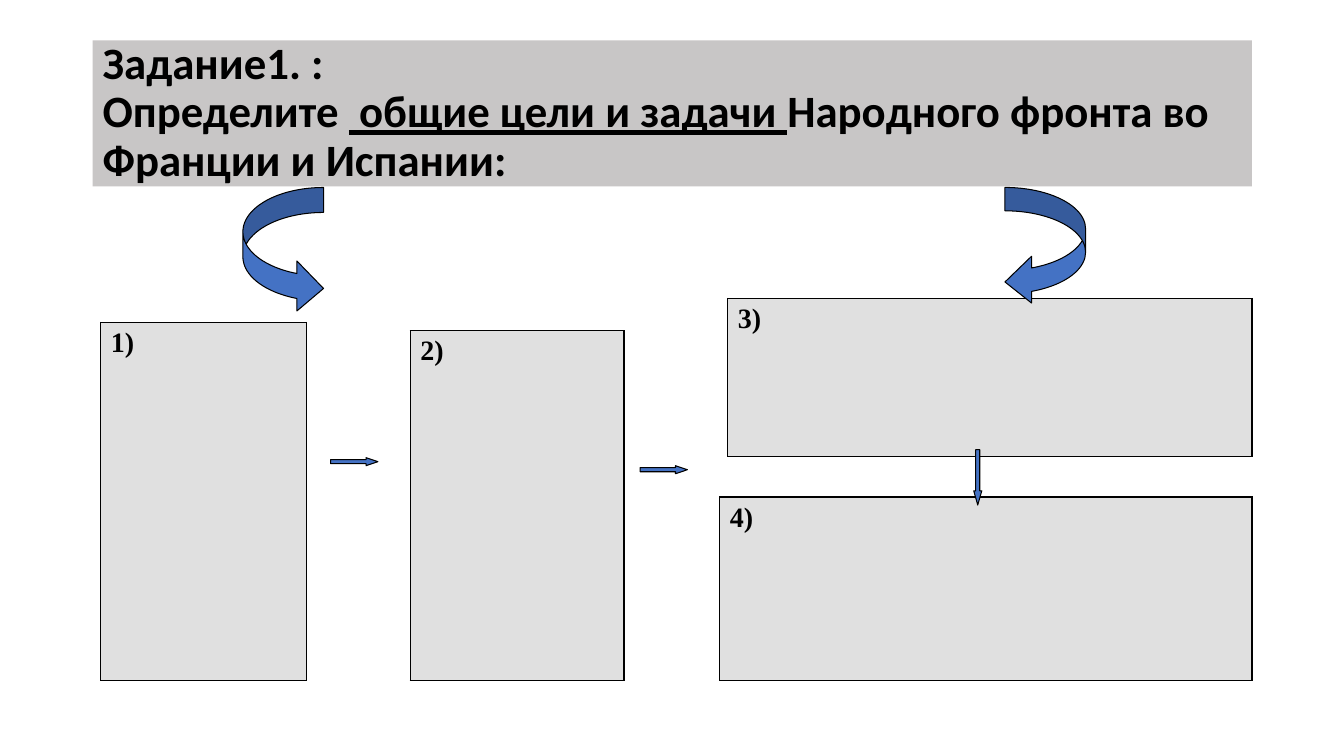
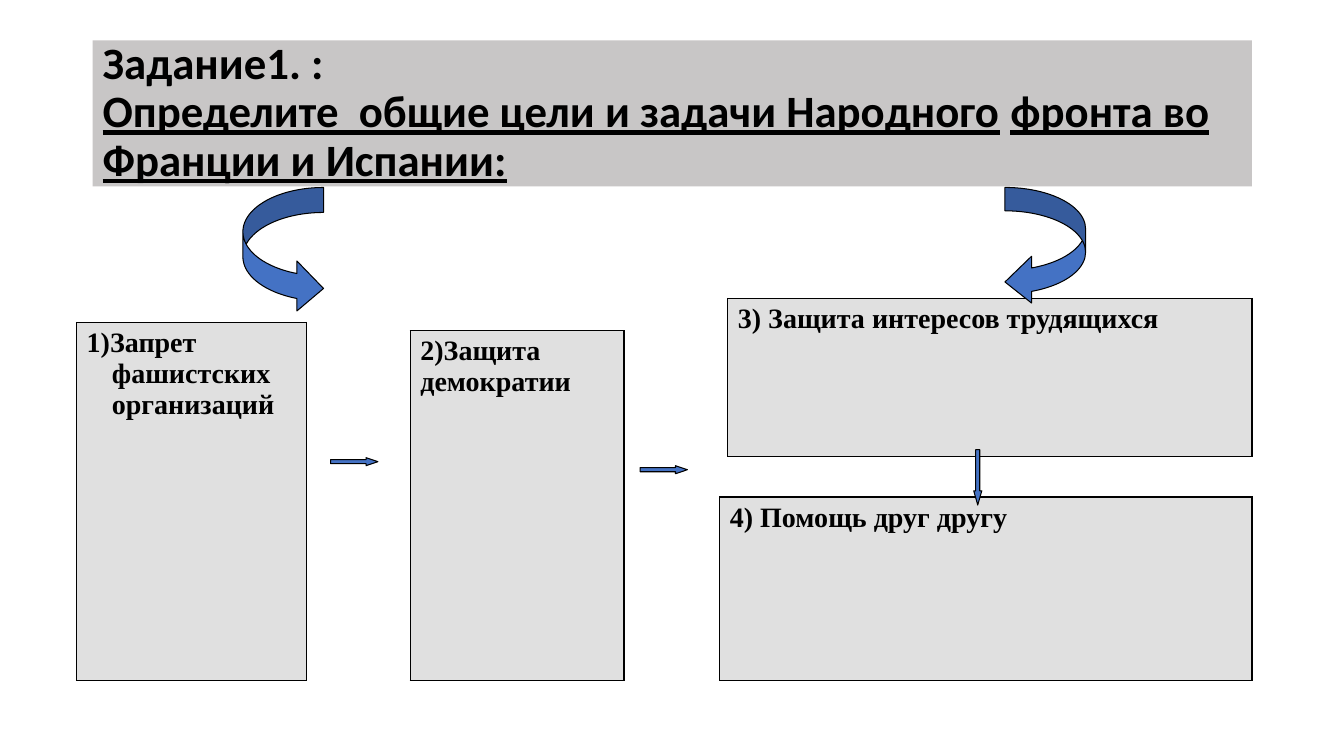
from dataclasses import dataclass

from pptx import Presentation
from pptx.dml.color import RGBColor
from pptx.enum.shapes import MSO_SHAPE
from pptx.enum.text import MSO_ANCHOR, PP_ALIGN
from pptx.oxml import parse_xml
from pptx.oxml.ns import nsdecls
from pptx.util import Inches, Pt

RECT = MSO_SHAPE.RECTANGLE
RIGHT = MSO_SHAPE.RIGHT_ARROW
DOWN = MSO_SHAPE.DOWN_ARROW
CURVED_RIGHT = MSO_SHAPE.CURVED_RIGHT_ARROW
CURVED_LEFT = MSO_SHAPE.CURVED_LEFT_ARROW
MIDDLE = MSO_ANCHOR.MIDDLE
LEFT = PP_ALIGN.LEFT

BLACK = RGBColor(0x00, 0x00, 0x00)
BAND = RGBColor(0xC8, 0xC6, 0xC6)
PANEL = RGBColor(0xE0, 0xE0, 0xE0)
BLUE = RGBColor(0x44, 0x72, 0xC4)

TITLE_FONT = {"name": "Calibri", "size": Pt(32), "bold": True}
PANEL_FONT = {"name": "Times New Roman", "size": Pt(20), "bold": True}

CELL = Inches(0.1)
COLS, ROWS = 133.33, 75
RIGHT_EDGE, BOTTOM_EDGE = 124.2, 67.5
TITLE_LEFT, TITLE_TOP, TITLE_HEIGHT = 9.2, 4, 14.5
CURVE_TOP, CURVE_WIDTH = 18.6, 8
HEADING = "Задание1. :"


@dataclass(frozen=True)
class Panel:
    left: float
    top: float
    right: float
    bottom: float
    text: str
    hanging: float = 0


@dataclass(frozen=True)
class Arrow:
    kind: MSO_SHAPE
    left: float
    top: float
    width: float
    height: float
    adjustments: tuple[float, ...]


@dataclass(frozen=True)
class Segment:
    text: str
    underline: bool = False


@dataclass(frozen=True)
class Task:
    title: tuple[Segment, ...]
    first_left: float
    hanging: float
    answers: tuple[str, str, str, str]


ARROWS = (
    Arrow(RIGHT, 32.8, 45.4, 4.7, 0.8, (0.5, 1.48)),
    Arrow(RIGHT, 63.5, 46.2, 4.7, 0.8, (0.5, 1.48)),
    Arrow(DOWN, 96.6, 44.6, 0.8, 5.5, (0.5, 1.76)),
    Arrow(CURVED_RIGHT, 24.1, CURVE_TOP, CURVE_WIDTH, 12.5, (0.31, 0.62, 0.33)),
    Arrow(CURVED_LEFT, 99.7, CURVE_TOP, CURVE_WIDTH, 11.7, (0.29, 0.58, 0.33)),
)

TASKS = (
    Task(
        (
            Segment("Определите "),
            Segment(" общие цели и задачи ", True),
            Segment("Народного фронта во Франции и Испании:"),
        ),
        10, 0,
        ("1)", "2)", "3)", "4)"),
    ),
    Task(
        (
            Segment("Определите  общие цели и задачи Народного", True),
            Segment(" "),
            Segment("фронта во Франции и Испании:", True),
        ),
        7.6, 2.5,
        (
            "1)Запрет фашистских организаций",
            "2)Защита демократии",
            "3) Защита интересов трудящихся",
            "4) Помощь друг другу",
        ),
    ),
)


def grid(*cells: float) -> list[int]:
    return [round(c * CELL) for c in cells]


def add_run(p, text: str, font: dict, underline: bool = False) -> None:
    r = p.add_run()
    r.text = text
    for name, value in font.items():
        setattr(r.font, name, value)
    r.font.underline = underline
    r.font.color.rgb = BLACK


def add_filled(s, kind: MSO_SHAPE, box: list[int], color: RGBColor):
    sp = s.shapes.add_shape(kind, *box)
    sp.shadow.inherit = False
    sp.fill.solid()
    sp.fill.fore_color.rgb = color
    return sp


def add_title(s, segments: tuple[Segment, ...]) -> None:
    box = grid(TITLE_LEFT, TITLE_TOP, RIGHT_EDGE - TITLE_LEFT, TITLE_HEIGHT)
    sp = add_filled(s, RECT, box, BAND)
    sp.line.fill.background()
    tf = sp.text_frame
    tf.word_wrap = True
    tf.vertical_anchor = MIDDLE
    p = tf.paragraphs[0]
    p.alignment = LEFT
    p.line_spacing = 0.9
    add_run(p, HEADING, TITLE_FONT)
    p.add_line_break()
    for segment in segments:
        add_run(p, segment.text, TITLE_FONT, segment.underline)


def add_panel(s, panel: Panel) -> None:
    box = grid(panel.left, panel.top, panel.right - panel.left, panel.bottom - panel.top)
    table = s.shapes.add_table(1, 1, *box).table
    table.first_row = table.horz_banding = False
    cell = table.cell(0, 0)
    tc_pr = cell._tc.get_or_add_tcPr()
    for side in ("lnL", "lnR", "lnT", "lnB"):
        tc_pr.append(parse_xml(
            f'<a:{side} {nsdecls("a")} w="{Pt(1)}"><a:solidFill>'
            f'<a:srgbClr val="{BLACK}"/></a:solidFill></a:{side}>'
        ))
    cell.fill.solid()
    cell.fill.fore_color.rgb = PANEL
    p = cell.text_frame.paragraphs[0]
    if panel.hanging:
        indent = grid(panel.hanging)[0]
        p_pr = p._p.get_or_add_pPr()
        p_pr.set("marL", str(indent))
        p_pr.set("indent", str(-indent))
    add_run(p, panel.text, PANEL_FONT)


def add_arrow(s, arrow: Arrow) -> None:
    box = grid(arrow.left, arrow.top, arrow.width, arrow.height)
    sp = add_filled(s, arrow.kind, box, BLUE)
    sp.line.color.rgb = BLACK
    sp.line.width = Pt(0.75)
    for i, value in enumerate(arrow.adjustments):
        sp.adjustments[i] = value


def add_task(prs, task: Task) -> None:
    s = prs.slides.add_slide(prs.slide_layouts[6])
    first, second, third, fourth = task.answers
    add_title(s, task.title)
    for panel in (
        Panel(task.first_left, 32, 30.4, BOTTOM_EDGE, first, task.hanging),
        Panel(40.7, 32.8, 61.9, BOTTOM_EDGE, second),
        Panel(72.2, 29.6, RIGHT_EDGE, 45.3, third),
        Panel(71.4, 49.3, RIGHT_EDGE, BOTTOM_EDGE, fourth),
    ):
        add_panel(s, panel)
    for arrow in ARROWS:
        add_arrow(s, arrow)


def main() -> None:
    prs = Presentation()
    prs.slide_width, prs.slide_height = grid(COLS, ROWS)
    for task in TASKS:
        add_task(prs, task)
    prs.save("out.pptx")


if __name__ == "__main__":
    main()
